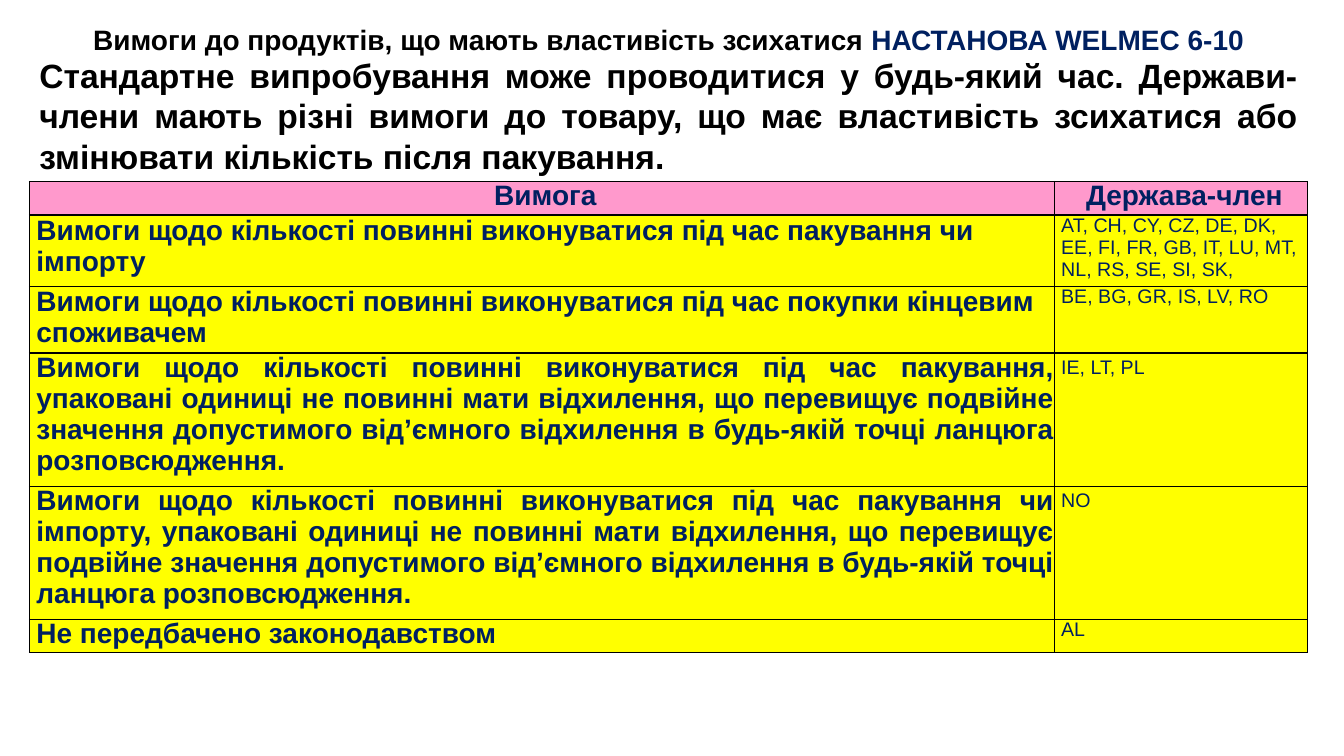
from lxml import etree
from pptx import Presentation
from pptx.dml.color import RGBColor
from pptx.enum import text
from pptx.oxml import ns
from pptx.util import Pt

BLACK = RGBColor(0x00, 0x00, 0x00)
NAVY = RGBColor(0x00, 0x20, 0x60)
PINK = RGBColor(0xFF, 0x99, 0xCC)
YELLOW = RGBColor(0xFF, 0xFF, 0x00)
LEFT, CENTER, JUSTIFY = text.PP_ALIGN.LEFT, text.PP_ALIGN.CENTER, text.PP_ALIGN.JUSTIFY


def write(frame, words, size=20, color=NAVY, bold=True, align=LEFT, spacing=None, indent=0):
    """Add a run to the first paragraph of a text frame."""
    paragraph = frame.paragraphs[0]
    paragraph.alignment = align
    if spacing:
        paragraph.line_spacing = spacing
    if indent:
        paragraph._p.get_or_add_pPr().set("marL", str(Pt(indent)))
    run = paragraph.add_run()
    run.text = words
    run.font.name = "Arial"
    run.font.size = Pt(size)
    run.font.bold = bold
    run.font.color.rgb = color


def outline(cell):
    """Draw a thin black border on all four sides of a cell."""
    properties = cell._tc.get_or_add_tcPr()
    for place, side in enumerate(("lnL", "lnR", "lnT", "lnB")):
        line = etree.Element(ns.qn(f"a:{side}"), w=str(Pt(1)))
        fill = etree.SubElement(line, ns.qn("a:solidFill"))
        etree.SubElement(fill, ns.qn("a:srgbClr"), val=str(BLACK))
        properties.insert(place, line)


deck = Presentation()
deck.slide_width, deck.slide_height = Pt(960), Pt(540)
slide = deck.slides.add_slide(deck.slide_layouts[6])

# Heading and introduction
heading = slide.shapes.add_textbox(Pt(39), Pt(12.2), Pt(877), Pt(31.5)).text_frame
intro = slide.shapes.add_textbox(Pt(21), Pt(35.3), Pt(913), Pt(94.5)).text_frame
for frame in (heading, intro):
    frame.word_wrap = True
    frame.auto_size = text.MSO_AUTO_SIZE.SHAPE_TO_FIT_TEXT
intro.vertical_anchor = text.MSO_ANCHOR.MIDDLE

write(heading, "Вимоги до продуктів, що мають властивість зсихатися ", color=BLACK, align=CENTER)
write(heading, "НАСТАНОВА WELMEC 6-10", align=CENTER)
write(intro, "Стандартне випробування може проводитися у будь-який час. Держави-члени мають різні "
      "вимоги до товару, що має властивість зсихатися або змінювати кількість після пакування.",
      size=24, color=BLACK, align=JUSTIFY)

# Requirements: height, text, alignment, line spacing, states, their line spacing
requirements = [
    (24, "Вимога", CENTER, 0.98, "Держава-член", 0.98),
    (51, "Вимоги щодо кількості повинні виконуватися під час пакування чи імпорту",
     LEFT, None, "AT, CH, CY, CZ, DE, DK, EE, FI, FR, GB, IT, LU, MT, NL, RS, SE, SI, SK,", 0.99),
    (47.5, "Вимоги щодо кількості повинні виконуватися під час покупки кінцевим споживачем",
     LEFT, 0.99, "BE, BG, GR, IS, LV, RO", 0.99),
    (95, "Вимоги щодо кількості повинні виконуватися під час пакування, упаковані одиниці "
     "не повинні мати відхилення, що перевищує подвійне значення допустимого від’ємного "
     "відхилення в будь-якій точці ланцюга розповсюдження.",
     JUSTIFY, 0.99, "IE, LT, PL", 1.15),
    (95, "Вимоги щодо кількості повинні виконуватися під час пакування чи імпорту, упаковані "
     "одиниці не повинні мати відхилення, що перевищує подвійне значення допустимого "
     "від’ємного відхилення в будь-якій точці ланцюга розповсюдження.",
     JUSTIFY, 0.99, "NO", 1.15),
    (23.5, "Не передбачено законодавством", LEFT, 0.97, "AL", 0.97),
]
total_height = sum(row[0] for row in requirements)
table = slide.shapes.add_table(len(requirements), 2, Pt(21), Pt(129.6),
                               Pt(913), Pt(total_height)).table
table.columns[0].width, table.columns[1].width = Pt(732), Pt(181)

for index, (height, requirement, align, spacing, states, states_spacing) in enumerate(requirements):
    header = index == 0
    table.rows[index].height = Pt(height)
    for cell in table.rows[index].cells:
        cell.margin_left = cell.margin_right = cell.margin_top = cell.margin_bottom = 0
        cell.fill.solid()
        cell.fill.fore_color.rgb = PINK if header else YELLOW
        outline(cell)
    write(table.cell(index, 0).text_frame, requirement, align=align, spacing=spacing, indent=5)
    write(table.cell(index, 1).text_frame, states, size=20 if header else 14, bold=header,
          align=CENTER if header else LEFT, spacing=states_spacing, indent=5)

deck.save("out.pptx")
